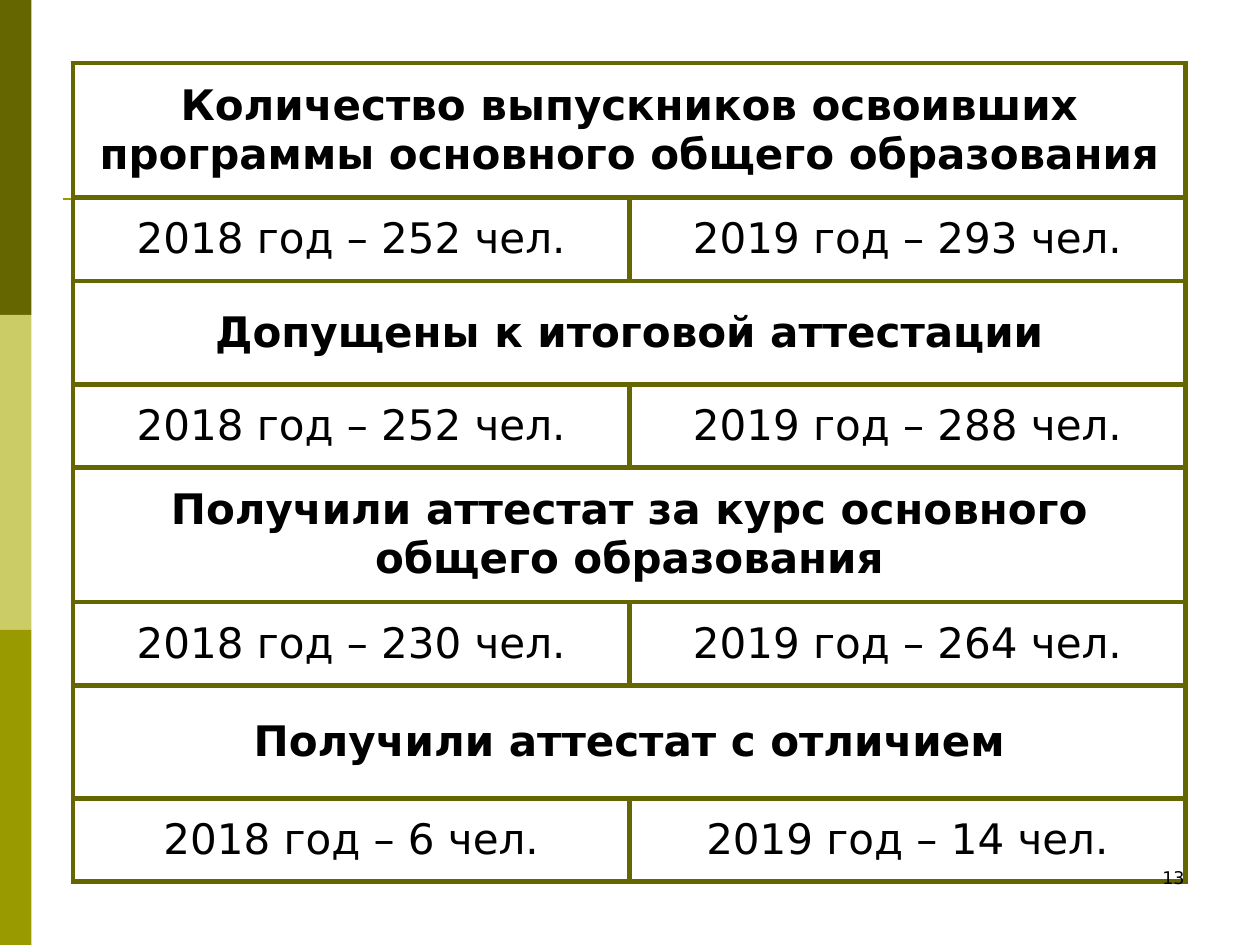
from lxml.etree import SubElement
from pptx import Presentation
from pptx.dml.color import RGBColor
from pptx.enum.shapes import MSO_CONNECTOR, MSO_SHAPE
from pptx.enum.text import MSO_ANCHOR, PP_ALIGN
from pptx.oxml.ns import qn
from pptx.util import Inches, Pt

# Content: heading, row height, then the results by year with their row height
GROUPS = [
    ("Количество выпускников освоивших программы основного общего образования",
     1.07, ("2018 год – 252 чел.", "2019 год – 293 чел.")),
    ("Допущены к итоговой аттестации",
     0.82, ("2018 год – 252 чел.", "2019 год – 288 чел.")),
    ("Получили аттестат за курс основного общего образования",
     1.07, ("2018 год – 230 чел.", "2019 год – 264 чел.")),
    ("Получили аттестат с отличием",
     0.9, ("2018 год – 6 чел.", "2019 год – 14 чел.")),
]
YEAR_H = 0.66
PAGE = "13"

FONT = "DejaVu Sans"
BLACK = RGBColor(0x00, 0x00, 0x00)
WHITE = RGBColor(0xFF, 0xFF, 0xFF)
DARK = RGBColor(0x66, 0x66, 0x00)
LIGHT = RGBColor(0xCC, 0xCC, 0x66)
OLIVE = RGBColor(0x99, 0x99, 0x00)
BANDS = [DARK, LIGHT, OLIVE]


def write(frame, text, size, align, bold=False):
    para = frame.paragraphs[0]
    para.alignment = align
    run = para.add_run()
    run.text = text
    font = run.font
    font.name, font.size, font.bold = FONT, Pt(size), bold
    font.color.rgb = BLACK


def border(cell, color, width):
    props = cell._tc.get_or_add_tcPr()
    for side in ("a:lnL", "a:lnR", "a:lnT", "a:lnB"):
        line = SubElement(props, qn(side), w=str(Pt(width)))
        fill = SubElement(line, qn("a:solidFill"))
        SubElement(fill, qn("a:srgbClr"), val=str(color))


def style(cell):
    border(cell, DARK, 3)
    cell.fill.solid()
    cell.fill.fore_color.rgb = WHITE
    cell.vertical_anchor = MSO_ANCHOR.MIDDLE


prs = Presentation()
prs.slide_width, prs.slide_height = Inches(10), Inches(7.5)
slide = prs.slides.add_slide(prs.slide_layouts[6])
shapes = slide.shapes

# Side bands, each a third of the slide's height
band_h = prs.slide_height // len(BANDS)
for i, color in enumerate(BANDS):
    band = shapes.add_shape(MSO_SHAPE.RECTANGLE, 0, i * band_h,
                            Inches(0.25), band_h)
    band.shadow.inherit = False
    band.fill.solid()
    band.fill.fore_color.rgb = color
    band.line.fill.background()

# Rule below the title area
rule = shapes.add_connector(MSO_CONNECTOR.STRAIGHT, Inches(0.5), Inches(1.58),
                            Inches(9.33), Inches(1.58))
rule.line.color.rgb = OLIVE
rule.line.width = Pt(1.5)
SubElement(rule._element.spPr, qn("a:effectLst"))

# Table: a merged heading row and a row of years for each group
table = shapes.add_table(2 * len(GROUPS), 2, Inches(0.58), Inches(0.5),
                         Inches(8.83), Inches(6.5)).table
table.first_row = table.horz_banding = False
for cell in table.iter_cells():
    style(cell)
for i, (head, height, years) in enumerate(GROUPS):
    top, low = 2 * i, 2 * i + 1
    table.rows[top].height = Inches(height)
    table.rows[low].height = Inches(YEAR_H)
    table.cell(top, 0).merge(table.cell(top, 1))
    write(table.cell(top, 0).text_frame, head, 24, PP_ALIGN.CENTER, True)
    for col, text in enumerate(years):
        write(table.cell(low, col).text_frame, text, 24, PP_ALIGN.CENTER)

# Page number
box = shapes.add_textbox(Inches(7.17), Inches(6.83), Inches(2.33), Inches(0.5))
box.text_frame.word_wrap = True
write(box.text_frame, PAGE, 10, PP_ALIGN.RIGHT)

prs.save("out.pptx")
